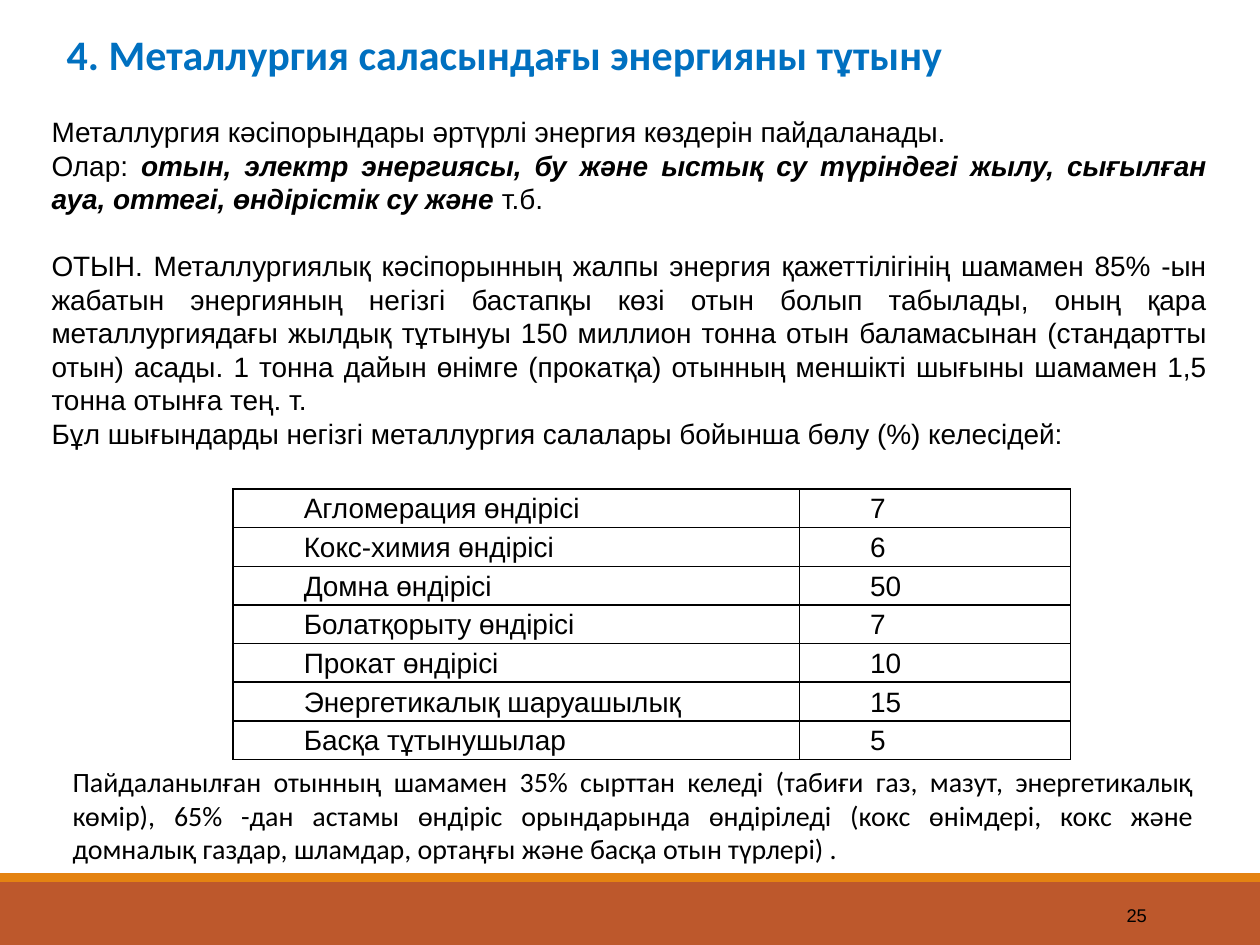
from dataclasses import dataclass
from typing import Any

from pptx import Presentation
from pptx.dml.color import RGBColor as RGB
from pptx.enum.shapes import MSO_SHAPE as Shape
from pptx.enum.text import MSO_ANCHOR as Anchor, PP_ALIGN as Align
from pptx.oxml import parse_xml
from pptx.oxml.ns import nsdecls
from pptx.util import Pt


def hue(code):
    return RGB.from_string(code)


@dataclass
class Deck:
    slide: Any
    font: str = "Arial"
    size: float = 16
    ink: str = "000000"

    def style(self, part, **extra):
        look = {"name": self.font, "size": Pt(self.size), **extra}
        tint = look.pop("color", self.ink)
        for key, value in look.items():
            setattr(part.font, key, value)
        part.font.color.rgb = hue(tint)

    def fill(self, para, runs, align, **extra):
        para.alignment = align
        for words, marks in runs:
            run = para.add_run()
            run.text = words
            self.style(run, **extra, **marks)

    def band(self, box, color):
        shape = self.slide.shapes.add_shape(Shape.RECTANGLE, *map(Pt, box))
        shape.shadow.inherit = False
        shape.fill.solid()
        shape.fill.fore_color.rgb = hue(color)
        shape.line.fill.background()

    def text(self, box, paras, align=Align.JUSTIFY, anchor=Anchor.TOP, **extra):
        frame = self.slide.shapes.add_textbox(*map(Pt, box)).text_frame
        frame.word_wrap = True
        frame.vertical_anchor = anchor
        for i, (gap, runs) in enumerate(paras):
            para = frame.add_paragraph() if i else frame.paragraphs[0]
            para.space_before = Pt(gap)
            self.fill(para, runs, align, **extra)

    def edge(self, cell):
        props = cell._tc.get_or_add_tcPr()
        for side in "LRTB":
            props.append(parse_xml(
                f'<a:ln{side} {nsdecls("a")} w="{Pt(1)}"><a:solidFill>'
                f'<a:srgbClr val="{self.ink}"/></a:solidFill></a:ln{side}>'))
        cell.fill.background()

    def table(self, left, top, cols, high, rows):
        grid = self.slide.shapes.add_table(
            len(rows), len(cols), Pt(left), Pt(top),
            Pt(sum(cols)), Pt(high * len(rows))).table
        grid.first_row = grid.horz_banding = False
        for col, wide in zip(grid.columns, cols):
            col.width = Pt(wide)
        for row, words in zip(grid.rows, rows):
            row.height = Pt(high)
            for cell, word in zip(row.cells, words):
                self.edge(cell)
                cell.margin_left = cell.margin_right = Pt(5)
                cell.margin_top = cell.margin_bottom = 0
                para = cell.text_frame.paragraphs[0]
                para.line_spacing = 1.15
                para._p.get_or_add_pPr().set("indent", str(Pt(35.4)))
                self.fill(para, [(word, {})], Align.JUSTIFY)


def main():
    show = Presentation()
    show.slide_width, show.slide_height = Pt(720), Pt(540)
    deck = Deck(show.slides.add_slide(show.slide_layouts[6]))

    deck.band((0, 504, 720, 36), "BD582C")
    deck.band((0, 499, 720, 5), "E48312")
    deck.text((584.6, 508.3, 77.8, 28.8), [(0, [("25", {})])],
              Align.RIGHT, Anchor.MIDDLE, size=Pt(10.5))

    strong = {"bold": True, "italic": True}
    deck.text((22.4, 62, 674.6, 201), [
        (0, [("Металлургия кәсіпорындары әртүрлі энергия көздерін "
              "пайдаланады. ", {})]),
        (0, [("Олар: ", {}),
             ("отын, электр энергиясы, бу және ыстық су түріндегі жылу, "
              "сығылған ауа, оттегі, өндірістік су және ", strong),
             ("т.б.", {})]),
        (19, [("ОТЫН. Металлургиялық кәсіпорынның жалпы энергия "
               "қажеттілігінің шамамен 85% -ын жабатын энергияның негізгі "
               "бастапқы көзі отын болып табылады, оның қара "
               "металлургиядағы жылдық тұтынуы 150 миллион тонна отын "
               "баламасынан (стандартты отын) асады. 1 тонна дайын өнімге "
               "(прокатқа) отынның меншікті шығыны шамамен 1,5 тонна "
               "отынға тең. т.", {})]),
        (0, [("Бұл шығындарды негізгі металлургия салалары бойынша бөлу "
              "(%) келесідей:", {})]),
    ])
    deck.text((31, 13, 653, 36),
              [(0, [("4. Металлургия саласындағы энергияны тұтыну", {})])],
              Align.LEFT, name="Calibri", size=Pt(24), bold=True,
              color="0070C0")
    deck.table(133.2, 279.4, (323.6, 155), 20.7, [
        ("Агломерация өндірісі", "7"),
        ("Кокс-химия өндірісі", "6"),
        ("Домна өндірісі", "50"),
        ("Болатқорыту өндірісі", "7"),
        ("Прокат өндірісі", "10"),
        ("Энергетикалық шаруашылық", "15"),
        ("Басқа тұтынушылар", "5"),
    ])
    deck.text((34.4, 433.4, 655, 65.4), [
        (0, [("Пайдаланылған отынның шамамен 35% сырттан келеді (табиғи "
              "газ, мазут, энергетикалық көмір), 65% -дан астамы өндіріс "
              "орындарында өндіріледі (кокс өнімдері, кокс және домналық "
              "газдар, шламдар, ортаңғы және басқа отын түрлері) .", {})]),
    ], name="Calibri")
    show.save("out.pptx")


if __name__ == "__main__":
    main()
